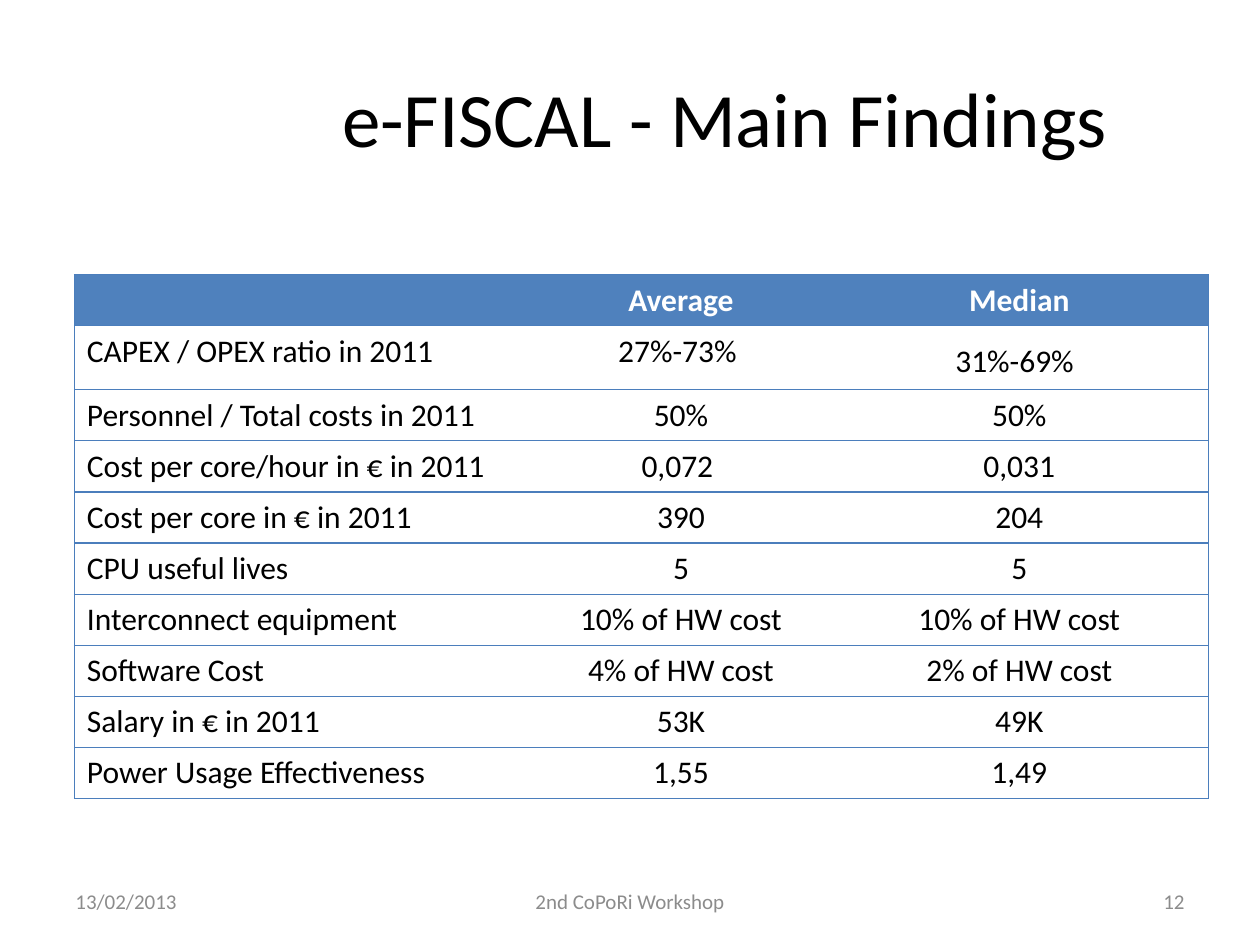
from lxml.etree import SubElement
from pptx import Presentation
from pptx.dml.color import RGBColor
from pptx.enum.text import MSO_ANCHOR as Anchor, PP_ALIGN as Align
from pptx.oxml.ns import qn
from pptx.util import Pt

TITLE = "e-FISCAL - Main Findings"
FINDINGS = [
    ("", "Average", "Median"),
    ("CAPEX / OPEX ratio in 2011", "27%-73% ", "31%-69%"),
    ("Personnel / Total costs in 2011", "50%", "50%"),
    ("Cost per core/hour in € in 2011", "0,072 ", "0,031"),
    ("Cost per core in € in 2011", "390", "204"),
    ("CPU useful lives", "5", "5"),
    ("Interconnect equipment", "10% of HW cost", "10% of HW cost"),
    ("Software Cost", "4% of HW cost", "2% of HW cost"),
    ("Salary in € in 2011", "53K", "49K"),
    ("Power Usage Effectiveness", "1,55", "1,49"),
]
FOOTERS = [
    ("13/02/2013", 36, 168, Align.LEFT),
    ("2nd CoPoRi Workshop", 246, 228, Align.CENTER),
    ("12", 516, 168, Align.RIGHT),
]
COLUMN_WIDTHS = [261.3, 170.7, 216]
ROW_HEIGHT = 29.2
FONT = "Calibri"
BLACK = RGBColor(0, 0, 0)
WHITE = RGBColor(255, 255, 255)
GRAY = RGBColor(0x8C, 0x8C, 0x8C)
HEADER_BLUE = RGBColor(0x4F, 0x81, 0xBD)
RULE_BLUE = RGBColor(0x4B, 0x7E, 0xBC)


def style(paragraph, size, color, align, bold=False):
    paragraph.alignment = align
    for run in paragraph.runs:
        run.font.name = FONT
        run.font.size = Pt(size)
        run.font.color.rgb = color
        run.font.bold = bold


def set_borders(cell, visible):
    properties = cell._tc.get_or_add_tcPr()
    for side in "LRTB":
        line = SubElement(properties, qn("a:ln" + side), w=str(Pt(0.75)))
        if side in visible:
            fill = SubElement(line, qn("a:solidFill"))
            SubElement(fill, qn("a:srgbClr"), val=str(RULE_BLUE))
        else:
            SubElement(line, qn("a:noFill"))


def add_findings(slide):
    table = slide.shapes.add_table(
        len(FINDINGS), len(COLUMN_WIDTHS), Pt(42.5), Pt(157),
        Pt(sum(COLUMN_WIDTHS)), Pt(ROW_HEIGHT * len(FINDINGS))).table
    table.first_row = table.horz_banding = False
    for column, width in zip(table.columns, COLUMN_WIDTHS):
        column.width = Pt(width)
    outer_sides = ["L", "", "R"]
    for r, finding in enumerate(FINDINGS):
        table.rows[r].height = Pt(ROW_HEIGHT)
        header = r == 0
        for c, entry in enumerate(finding):
            cell = table.cell(r, c)
            set_borders(cell, "TB" + outer_sides[c])
            if header:
                cell.fill.solid()
                cell.fill.fore_color.rgb = HEADER_BLUE
            else:
                cell.fill.background()
            cell.text_frame.text = entry
            style(cell.text_frame.paragraphs[0], 18, WHITE if header else BLACK,
                  Align.CENTER if c else Align.LEFT, header)
    median_ratio = table.cell(1, 2).text_frame.paragraphs[0]
    spacer = median_ratio.add_run()
    spacer.text = " "
    spacer.font.name = FONT
    spacer.font.size = Pt(24)


def add_footer(slide, text, left, width, align):
    footer = slide.shapes.add_textbox(Pt(left), Pt(500.5), Pt(width), Pt(28.75))
    frame = footer.text_frame
    frame.word_wrap = True
    frame.vertical_anchor = Anchor.MIDDLE
    frame.text = text
    style(frame.paragraphs[0], 12, GRAY, align)


def main():
    deck = Presentation()
    deck.slide_width, deck.slide_height = Pt(720), Pt(540)
    slide = deck.slides.add_slide(deck.slide_layouts[5])
    title = slide.shapes.title
    title.left, title.top, title.width, title.height = Pt(144.5), Pt(21.6), Pt(539.5), Pt(90)
    title.text_frame.text = TITLE
    title.text_frame.vertical_anchor = Anchor.MIDDLE
    style(title.text_frame.paragraphs[0], 44, BLACK, Align.CENTER)
    add_findings(slide)
    for footer in FOOTERS:
        add_footer(slide, *footer)
    deck.save("out.pptx")


if __name__ == "__main__":
    main()
